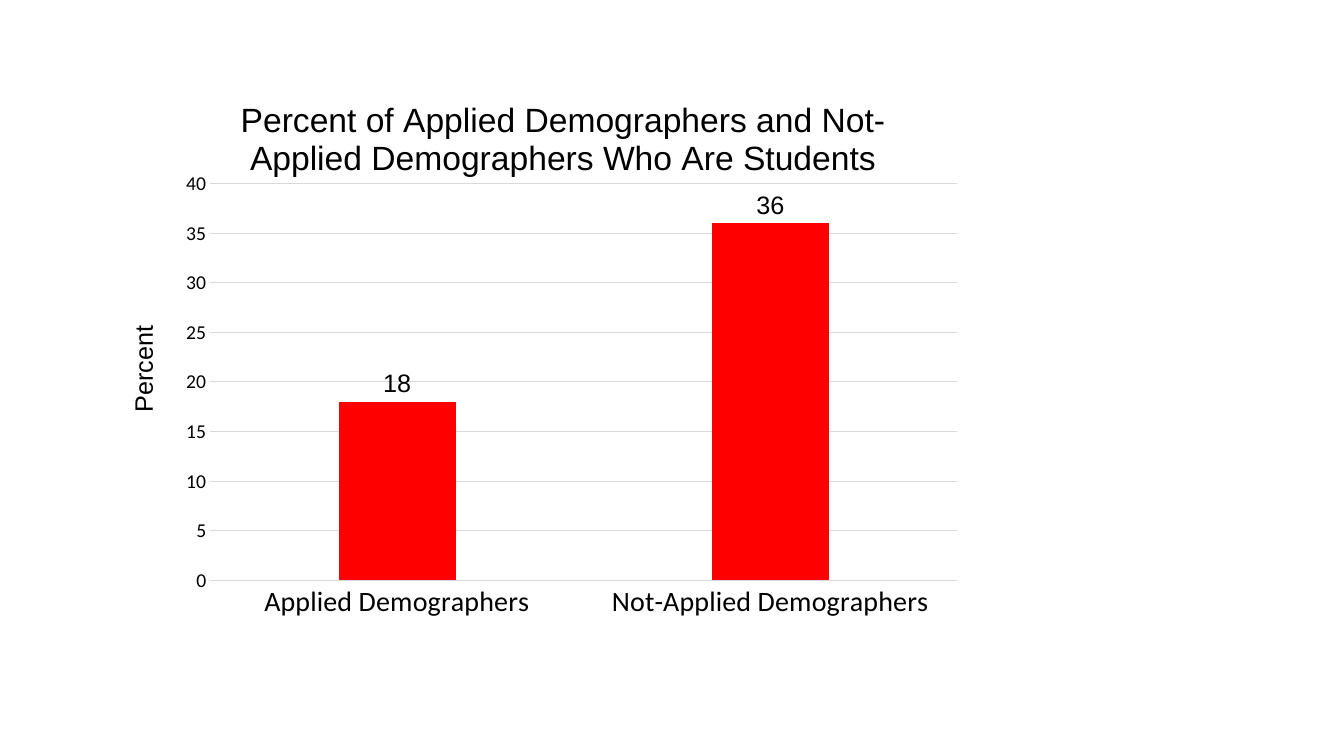
import pptx
import pptx.chart.data
import pptx.dml.color
import pptx.enum.chart
import pptx.oxml
import pptx.oxml.ns
import pptx.util

COLORS = {"text": "000000", "bar": "FF0000", "line": "D9D9D9"}
SLIDE_WIDTH = pptx.util.Inches(13.33)
SLIDE_HEIGHT = pptx.util.Inches(7.5)
PERCENTS = {"Applied Demographers": 18, "Not-Applied Demographers": 36}


def color(name):
    return pptx.dml.color.RGBColor.from_string(COLORS[name])


def style_font(font, size, name):
    font.size = pptx.util.Pt(size)
    font.name = name
    font.bold = False
    font.color.rgb = color("text")


def style_line(line):
    line.color.rgb = color("line")
    line.width = pptx.util.Pt(0.75)


def place(element, left, top, width=None, height=None):
    """Fix a chart part at shares of the chart's size."""
    tag = pptx.oxml.ns.qn
    for old_layout in element.findall(tag("c:layout")):
        element.remove(old_layout)
    settings = [("xMode", "edge"), ("yMode", "edge"), ("x", left), ("y", top)]
    if width is not None:
        settings = [("layoutTarget", "inner"), *settings, ("w", width), ("h", height)]
    parts = "".join(f'<c:{key} val="{value}"/>' for key, value in settings)
    layout = pptx.oxml.parse_xml(
        f'<c:layout {pptx.oxml.ns.nsdecls("c")}>'
        f"<c:manualLayout>{parts}</c:manualLayout></c:layout>"
    )
    text = element.find(tag("c:tx"))
    element.insert(0 if text is None else 1, layout)


def add_title(owner, text, size, left, top):
    """Title a chart or an axis."""
    title = owner.chart_title if hasattr(owner, "chart_title") else owner.axis_title
    title.text_frame.text = text
    style_font(title.text_frame.paragraphs[0].runs[0].font, size, "Arial")
    place(title._element, left, top)


def style_axes(chart):
    category_axis, value_axis = chart.category_axis, chart.value_axis
    for axis, size in ((category_axis, 20), (value_axis, 14)):
        axis.major_tick_mark = pptx.enum.chart.XL_TICK_MARK.NONE
        axis.minor_tick_mark = pptx.enum.chart.XL_TICK_MARK.NONE
        style_font(axis.tick_labels.font, size, "Calibri")
    style_line(category_axis.format.line)
    value_axis.format.line.fill.background()
    value_axis.minimum_scale = 0
    value_axis.maximum_scale = 40
    value_axis.major_unit = 5
    value_axis.tick_labels.number_format = "0"
    value_axis.tick_labels.number_format_is_linked = False
    style_line(value_axis.major_gridlines.format.line)


def style_bars(plot):
    plot.gap_width = 219
    plot.vary_by_categories = False
    fill = plot.series[0].format.fill
    fill.solid()
    fill.fore_color.rgb = color("bar")
    labels = plot.series[0].data_labels
    labels.show_value = True
    labels.number_format = "0"
    labels.number_format_is_linked = False
    labels.position = pptx.enum.chart.XL_LABEL_POSITION.OUTSIDE_END
    style_font(labels.font, 18, "Arial")


def add_student_chart(slide):
    data = pptx.chart.data.CategoryChartData(number_format="0")
    data.categories = list(PERCENTS)
    data.add_series("Series 1", list(PERCENTS.values()))
    chart = slide.shapes.add_chart(
        pptx.enum.chart.XL_CHART_TYPE.COLUMN_CLUSTERED,
        int(SLIDE_WIDTH * 0.078),
        int(SLIDE_HEIGHT * 0.084),
        int(SLIDE_WIDTH * 0.6437),
        int(SLIDE_HEIGHT * 0.7573),
        data,
    ).chart
    style_font(chart.font, 10, "Calibri")
    chart.has_legend = False
    style_axes(chart)
    style_bars(chart.plots[0])
    add_title(
        chart,
        "Percent of Applied Demographers and Not-Applied Demographers Who Are Students",
        24, 0.15, 0.05,
    )
    add_title(chart.value_axis, "Percent", 18, 0.02, 0.45)
    plot_area = chart._chartSpace.chart.plotArea
    place(plot_area, 0.122, 0.21, 0.863, 0.693)


def main():
    presentation = pptx.Presentation()
    presentation.slide_width = SLIDE_WIDTH
    presentation.slide_height = SLIDE_HEIGHT
    slide = presentation.slides.add_slide(presentation.slide_layouts[6])
    add_student_chart(slide)
    presentation.save("out.pptx")


if __name__ == "__main__":
    main()
